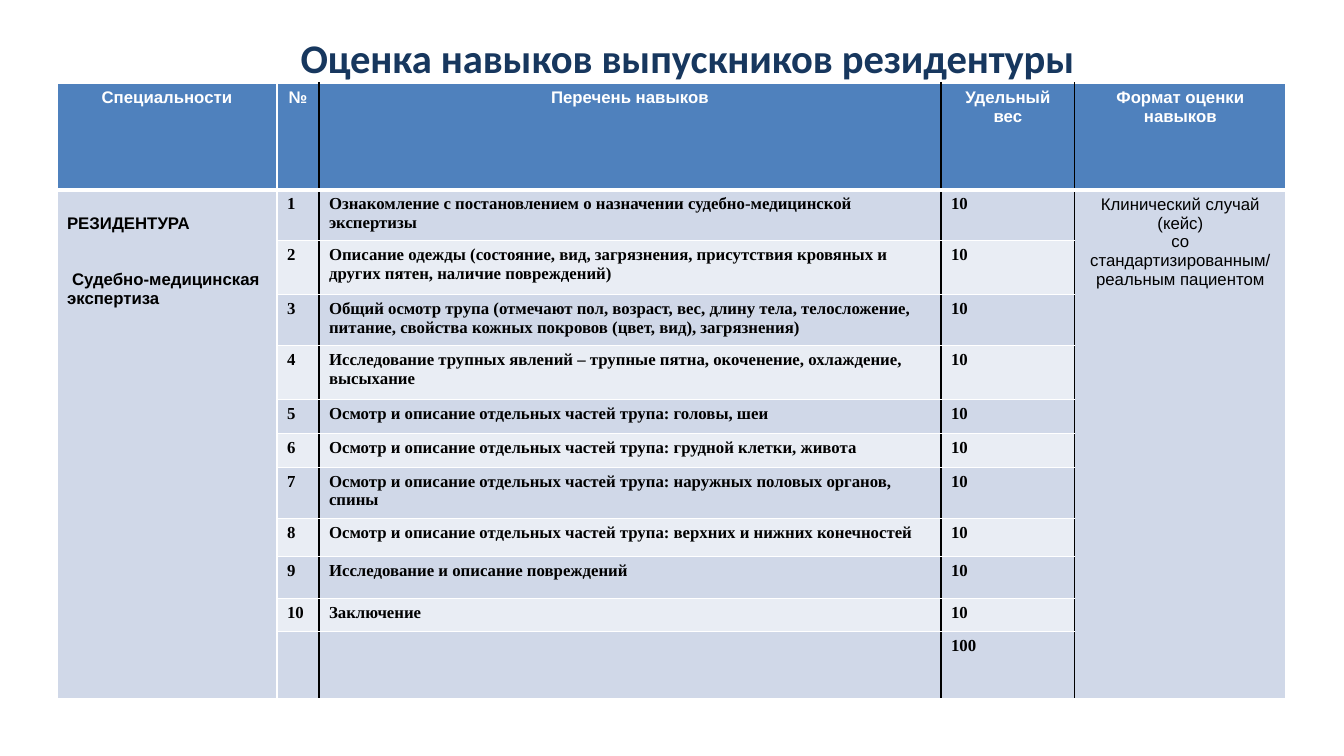
from lxml import etree
from pptx import Presentation
from pptx.dml.color import RGBColor
from pptx.enum.text import PP_ALIGN
from pptx.oxml.ns import qn
from pptx.util import Emu, Pt

LEFT, CENTER = PP_ALIGN.LEFT, PP_ALIGN.CENTER

TITLE = "Оценка навыков выпускников резидентуры"
HEADERS = ["Специальности", "№", "Перечень навыков", "Удельный вес", "Формат оценки навыков"]
SPECIALTY = ["РЕЗИДЕНТУРА", "Судебно-медицинская экспертиза"]
ASSESSMENT = ["Клинический случай (кейс)", "со стандартизированным/", "реальным пациентом"]
SKILLS = [
    "Ознакомление с постановлением о назначении судебно-медицинской экспертизы",
    "Описание одежды (состояние, вид, загрязнения, присутствия кровяных и других пятен, "
    "наличие повреждений)",
    "Общий осмотр трупа (отмечают пол, возраст, вес, длину тела, телосложение, питание, "
    "свойства кожных покровов (цвет, вид), загрязнения)",
    "Исследование трупных явлений – трупные пятна, окоченение, охлаждение, высыхание",
    "Осмотр и описание отдельных частей трупа: головы, шеи",
    "Осмотр и описание отдельных частей трупа: грудной клетки, живота",
    "Осмотр и описание отдельных частей трупа: наружных половых органов, спины",
    "Осмотр и описание отдельных частей трупа: верхних и нижних конечностей",
    "Исследование и описание повреждений",
    "Заключение",
]
WEIGHT = 10

SLIDE_SIZE = (1344, 756)
TITLE_BOX = (57, 31, 1261, 51)
TABLE_LEFT, TABLE_TOP = 57, 83
COLUMN_WIDTHS = [220, 42, 622, 134, 211]
ROW_HEIGHTS = [107, 50, 54, 51, 54, 34, 34, 51, 38, 42, 33, 67]

NAVY = RGBColor(0x17, 0x37, 0x5E)
BLUE = RGBColor(0x4F, 0x81, 0xBD)
BAND_DARK = RGBColor(0xD0, 0xD8, 0xE8)
BAND_LIGHT = RGBColor(0xE9, 0xED, 0xF4)
WHITE = RGBColor(0xFF, 0xFF, 0xFF)
BLACK = RGBColor(0, 0, 0)
SANS, SERIF, TITLE_FONT = "Arial", "Times New Roman", "Calibri"


def px(length):
    return Emu(round(length * 914400 / 100.8))


def write_text(frame, lines, font=SERIF, size=12, color=BLACK, bold=True, align=LEFT, gap=0):
    """Write one paragraph per line, with gap points between paragraphs."""
    for index, line in enumerate(lines):
        para = frame.add_paragraph() if index else frame.paragraphs[0]
        para.alignment = align
        if index and gap:
            para.space_before = Pt(gap)
        span = para.add_run()
        span.text = line
        span.font.name = font
        span.font.size = Pt(size)
        span.font.bold = bold
        span.font.color.rgb = color


def set_borders(cell, **sides):
    """Draw the sides L, R, T and B, each given as (colour, points)."""
    properties = cell._tc.get_or_add_tcPr()
    for index, side in enumerate("LRTB"):
        color, width = sides[side]
        line = etree.Element(qn(f"a:ln{side}"), w=str(Pt(width)))
        fill = etree.SubElement(line, qn("a:solidFill"))
        etree.SubElement(fill, qn("a:srgbClr"), val=str(color))
        properties.insert(index, line)


def add_title(page):
    box = page.shapes.add_textbox(*map(px, TITLE_BOX))
    frame = box.text_frame
    frame.word_wrap = True
    frame.margin_left = frame.margin_right = frame.margin_bottom = 0
    frame.margin_top = px(2)
    write_text(frame, [TITLE], font=TITLE_FONT, size=29, color=NAVY, align=CENTER)
    frame.paragraphs[0].runs[0].font._element.set("spc", "-10")


def style_cells(table):
    divider_colors = [WHITE, WHITE, BLACK, BLACK, BLACK, WHITE]
    for row in range(len(ROW_HEIGHTS)):
        for column in range(len(COLUMN_WIDTHS)):
            cell = table.cell(row, column)
            cell.fill.solid()
            if row == 0:
                cell.fill.fore_color.rgb = BLUE
            else:
                cell.fill.fore_color.rgb = BAND_DARK if row % 2 else BAND_LIGHT
            set_borders(
                cell,
                L=(divider_colors[column], 1),
                R=(divider_colors[column + 1], 1),
                T=(WHITE, 3 if row == 1 else 1),
                B=(WHITE, 3 if row == 0 else 1),
            )


def add_skills_table(page):
    frame = page.shapes.add_table(
        len(ROW_HEIGHTS), len(COLUMN_WIDTHS), px(TABLE_LEFT), px(TABLE_TOP),
        px(sum(COLUMN_WIDTHS)), px(sum(ROW_HEIGHTS)))
    table = frame.table
    for column, width in zip(table.columns, COLUMN_WIDTHS):
        column.width = px(width)
    for row, height in zip(table.rows, ROW_HEIGHTS):
        row.height = px(height)
    style_cells(table)

    last_row = len(ROW_HEIGHTS) - 1
    for column in (0, len(COLUMN_WIDTHS) - 1):
        table.cell(1, column).merge(table.cell(last_row, column))

    for column, header in enumerate(HEADERS):
        write_text(table.cell(0, column).text_frame, [header],
                   font=SANS, color=WHITE, align=CENTER)

    specialty = table.cell(1, 0)
    specialty.margin_top = px(24)
    write_text(specialty.text_frame, SPECIALTY, font=SANS, gap=27)
    specialty.text_frame.paragraphs[1]._p.get_or_add_pPr().set("indent", str(px(5)))
    write_text(table.cell(1, 4).text_frame, ASSESSMENT, font=SANS, bold=False, align=CENTER)

    for number, skill in enumerate(SKILLS, start=1):
        for column, value in enumerate((number, skill, WEIGHT), start=1):
            write_text(table.cell(number, column).text_frame, [str(value)])
    write_text(table.cell(last_row, 3).text_frame, [str(WEIGHT * len(SKILLS))])


def main():
    deck = Presentation()
    deck.slide_width, deck.slide_height = map(px, SLIDE_SIZE)
    page = deck.slides.add_slide(deck.slide_layouts[6])
    add_title(page)
    add_skills_table(page)
    deck.save("out.pptx")


if __name__ == "__main__":
    main()
